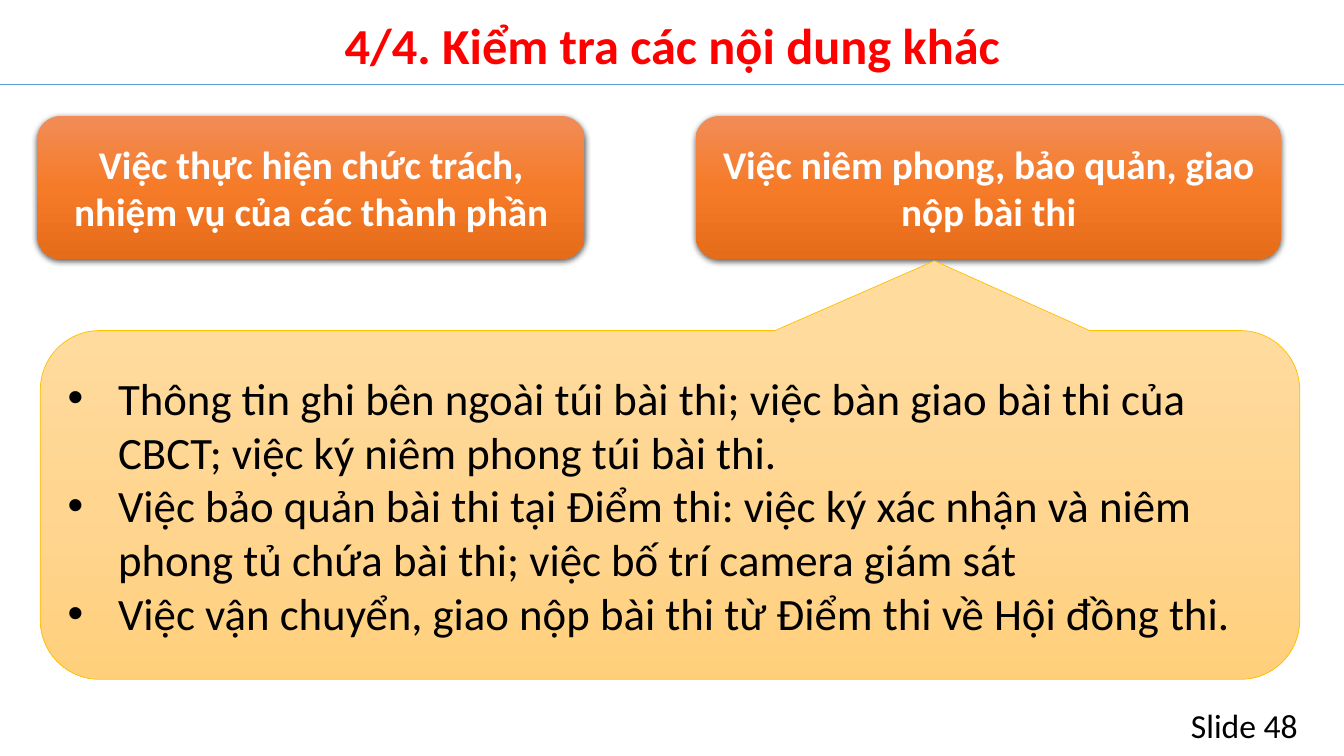
import copy

import lxml.etree
import pptx
import pptx.dml.color
import pptx.enum.dml
import pptx.enum.shapes
import pptx.enum.text
import pptx.oxml
import pptx.oxml.ns
import pptx.util

Inches = pptx.util.Inches
Pt = pptx.util.Pt
ALIGN = pptx.enum.text.PP_ALIGN
SHAPE = pptx.enum.shapes.MSO_SHAPE

COLORS = {
    "title": "FF0000", "rule": "5B9BD5", "text": "000000",
    "box_text": "FFFFFF", "callout_line": "FFC000",
}
GRADIENTS = {
    "box": ["F18C57", "F67B28", "E56C19"],
    "callout": ["FFDB9E", "FFD590", "FFD07C"],
}
NAMESPACE = pptx.oxml.ns.nsdecls("a")
SHADOW = (
    f'<a:outerShdw {NAMESPACE} blurRad="57150" dist="19050" dir="5400000" '
    'algn="ctr" rotWithShape="0"><a:srgbClr val="000000">'
    '<a:alpha val="63000"/></a:srgbClr></a:outerShdw>'
)


def color(name):
    return pptx.dml.color.RGBColor.from_string(COLORS.get(name, name))


class SlideBuilder:
    """Holds the style and the current slide."""

    font_name = "Calibri"

    def __init__(self, presentation):
        self.slide = presentation.slides.add_slide(presentation.slide_layouts[5])

    def set_text(self, shape, lines, size, color_name, bold=False, bullet=False,
                 **paragraph_format):
        frame = shape.text_frame
        frame.word_wrap = True
        frame.auto_size = pptx.enum.text.MSO_AUTO_SIZE.NONE
        frame.text = "\n".join(lines)
        font_format = {"name": self.font_name, "size": Pt(size), "bold": bold}
        for paragraph in frame.paragraphs:
            for name, value in paragraph_format.items():
                setattr(paragraph, name, value)
            for run in paragraph.runs:
                for name, value in font_format.items():
                    setattr(run.font, name, value)
                run.font.color.rgb = color(color_name)
            if bullet:
                self.add_bullet(paragraph)
        return frame

    def add_bullet(self, paragraph):
        properties = paragraph._p.get_or_add_pPr()
        properties.set("marL", str(Inches(0.5)))
        properties.set("indent", str(Inches(-0.5)))
        for tag, attribute, value in (("buFont", "typeface", "Arial"), ("buChar", "char", "•")):
            lxml.etree.SubElement(properties, pptx.oxml.ns.qn(f"a:{tag}")).set(attribute, value)

    def title(self, text, left, top, width, height):
        shape = self.slide.shapes.title
        place = {"left": left, "top": top, "width": width, "height": height}
        for name, value in place.items():
            setattr(shape, name, Inches(value))
        frame = self.set_text(shape, [text], 36, "title", bold=True,
                              alignment=ALIGN.CENTER, line_spacing=0.9)
        frame.vertical_anchor = pptx.enum.text.MSO_ANCHOR.MIDDLE

    def rule(self, top, width):
        connector = self.slide.shapes.add_connector(
            pptx.enum.shapes.MSO_CONNECTOR.STRAIGHT,
            Inches(0), Inches(top), Inches(width), Inches(top))
        connector.line.color.rgb = color("rule")
        connector.line.width = Pt(0.5)
        lxml.etree.SubElement(connector._element.spPr, pptx.oxml.ns.qn("a:effectLst"))

    def label(self, text, left, top, width, height):
        shape = self.slide.shapes.add_textbox(*map(Inches, (left, top, width, height)))
        self.set_text(shape, [text], 24, "text", alignment=ALIGN.RIGHT)

    def gradient_shape(self, kind, gradient, left, top, width, height):
        shape = self.slide.shapes.add_shape(kind, *map(Inches, (left, top, width, height)))
        shape.shadow.inherit = False
        shape.fill.gradient()
        shape.fill.gradient_angle = 270
        # The default gradient has two stops; add one for the middle
        first_stop = shape.fill.gradient_stops[0]._gs
        first_stop.addnext(copy.deepcopy(first_stop))
        for index, stop in enumerate(shape.fill.gradient_stops):
            stop.position = index / 2
            stop.color.rgb = color(GRADIENTS[gradient][index])
        shape.text_frame.vertical_anchor = pptx.enum.text.MSO_ANCHOR.MIDDLE
        return shape

    def box(self, text, left, top, width, height):
        shape = self.gradient_shape(SHAPE.ROUNDED_RECTANGLE, "box", left, top, width, height)
        shape.line.fill.background()
        effects = shape._element.spPr.find(pptx.oxml.ns.qn("a:effectLst"))
        effects.append(pptx.oxml.parse_xml(SHADOW))
        self.set_text(shape, [text], 28, "box_text", bold=True, alignment=ALIGN.CENTER)

    def callout(self, lines, left, top, width, height, adjustments):
        shape = self.gradient_shape(SHAPE.ROUNDED_RECTANGULAR_CALLOUT, "callout",
                                    left, top, width, height)
        for index, value in enumerate(adjustments):
            shape.adjustments[index] = value
        shape.line.color.rgb = color("callout_line")
        shape.line.width = Pt(0.5)
        self.set_text(shape, lines, 32, "text", bullet=True, alignment=ALIGN.LEFT)


def main():
    presentation = pptx.Presentation()
    presentation.slide_width = Inches(13.33)
    presentation.slide_height = Inches(7.5)
    builder = SlideBuilder(presentation)

    # Heading and slide number
    builder.rule(0.84, 13.33)
    builder.label("Slide 48", 10.29, 6.94, 2.68, 0.5)
    builder.title("4/4. Kiểm tra các nội dung khác", 0.37, 0.19, 12.6, 0.57)

    # Two topics
    topics = [
        ("Việc thực hiện chức trách, nhiệm vụ của các thành phần", 0.37, 5.43),
        ("Việc niêm phong, bảo quản, giao nộp bài thi", 6.9, 5.81),
    ]
    for text, left, width in topics:
        builder.box(text, left, 1.15, width, 1.42)

    # Details of the second topic
    builder.callout([
        "Thông tin ghi bên ngoài túi bài thi; việc bàn giao bài thi của CBCT; "
        "việc ký niêm phong túi bài thi.",
        "Việc bảo quản bài thi tại Điểm thi: việc ký xác nhận và niêm phong tủ "
        "chứa bài thi; việc bố trí camera giám sát",
        "Việc vận chuyển, giao nộp bài thi từ Điểm thi về Hội đồng thi.",
    ], 0.4, 3.28, 12.49, 3.46, (0.21, -0.7, 0.17))

    presentation.save("out.pptx")


if __name__ == "__main__":
    main()
